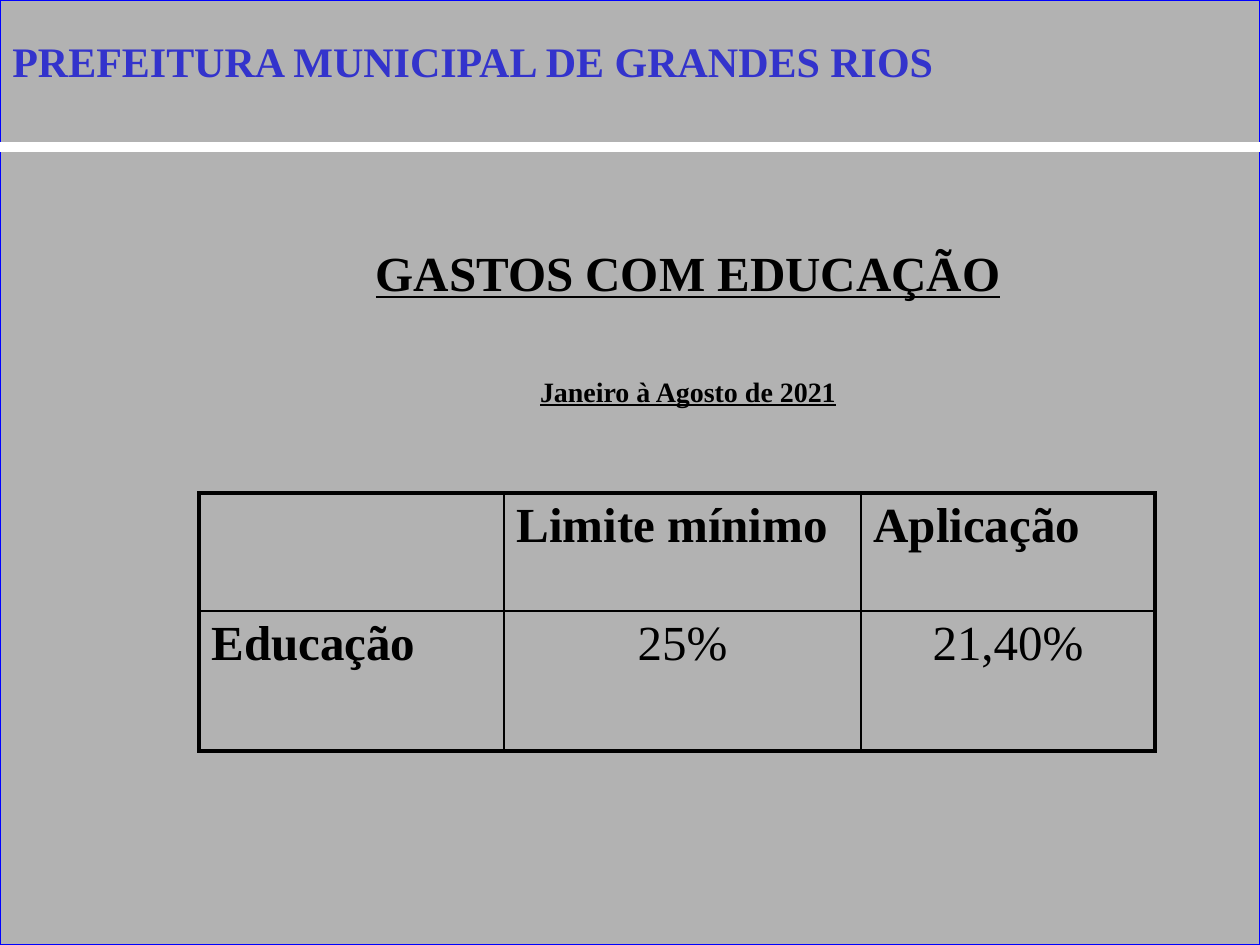
from dataclasses import dataclass

from lxml.etree import SubElement
from pptx import Presentation
from pptx.dml.color import RGBColor
from pptx.enum.shapes import MSO_CONNECTOR, MSO_SHAPE
from pptx.enum.text import PP_ALIGN
from pptx.oxml.ns import qn
from pptx.util import Emu, Pt

PX_PER_INCH = 126


@dataclass(frozen=True)
class Theme:
    font: str = "Times New Roman"
    ground: str = "B2B2B2"
    frame: str = "0000FF"
    rule: str = "FFFFFF"
    ink: str = "000000"
    title: str = "3333CC"
    shadow: str = "808080"
    title_size: int = 24
    large: int = 28
    small: int = 16
    outer_border: float = 2.25
    inner_border: float = 1


THEME = Theme()


def px(n):
    return Emu(round(n * 914400 / PX_PER_INCH))


def rgb(value):
    return RGBColor.from_string(value)


def add_text(p, text, size=THEME.large, color=THEME.ink, bold=True,
             underline=False, align=PP_ALIGN.LEFT, spacing=None, before=0):
    p.alignment = align
    p.line_spacing = spacing
    p.space_before = px(before)
    r = p.add_run()
    r.text = text
    f = r.font
    f.name, f.size, f.bold, f.underline = THEME.font, Pt(size), bold, underline
    f.color.rgb = rgb(color)
    return r


def add_box(s, x, y, w, h, inset_top):
    tf = s.shapes.add_textbox(px(x), px(y), px(w), px(h)).text_frame
    tf.word_wrap = True
    tf.margin_top = px(inset_top)
    return tf


def add_text_shadow(r):
    rPr = r.font._element
    effects = rPr.makeelement(qn("a:effectLst"), {})
    rPr.find(qn("a:solidFill")).addnext(effects)
    shadow = SubElement(effects, qn("a:outerShdw"), dist="35921",
                        dir="2700000", algn="ctr", rotWithShape="0")
    SubElement(shadow, qn("a:srgbClr"), val=THEME.shadow)


def set_borders(cell, widths):
    """Draw the left, right, top and bottom borders, widths in points."""
    tcPr = cell._tc.get_or_add_tcPr()
    for i, (side, width) in enumerate(zip("LRTB", widths)):
        ln = tcPr.makeelement(qn(f"a:ln{side}"), {"w": str(Pt(width))})
        tcPr.insert(i, ln)
        fill = SubElement(ln, qn("a:solidFill"))
        SubElement(fill, qn("a:srgbClr"), val=THEME.ink)


def draw_background(s, x, y, w, h):
    sp = s.shapes.add_shape(MSO_SHAPE.RECTANGLE, px(x), px(y), px(w), px(h))
    sp.shadow.inherit = False
    sp.fill.solid()
    sp.fill.fore_color.rgb = rgb(THEME.ground)
    sp.line.color.rgb = rgb(THEME.frame)
    sp.line.width = Pt(0.75)


def draw_header(s, x, y, w, h):
    """Place the title, with a rule along the bottom of the box."""
    rule = s.shapes.add_connector(MSO_CONNECTOR.STRAIGHT, px(x), px(y + h),
                                  px(x + w), px(y + h))
    rule.line.color.rgb = rgb(THEME.rule)
    rule.line.width = Pt(6)
    SubElement(rule._element.spPr, qn("a:effectLst"))
    tf = add_box(s, x, y + 26, w - 64, 63, inset_top=10)
    r = add_text(tf.paragraphs[0], "PREFEITURA MUNICIPAL DE GRANDES RIOS",
                 size=THEME.title_size, color=THEME.title)
    add_text_shadow(r)


def draw_heading(s, x, y, w, h):
    tf = add_box(s, x, y, w, h, inset_top=14)
    style = dict(underline=True, align=PP_ALIGN.CENTER, spacing=1.5)
    add_text(tf.paragraphs[0], "GASTOS COM EDUCAÇÃO", **style)
    add_text(tf.add_paragraph(), "Janeiro à Agosto de 2021",
             size=THEME.small, before=56, **style)


def draw_spending_table(s, x, y, col_widths, row_heights):
    rows = [["", "Limite mínimo", "Aplicação"],
            ["Educação", "25%", "21,40%"]]
    n_rows, n_cols = len(row_heights), len(col_widths)
    frame = s.shapes.add_table(n_rows, n_cols, px(x), px(y),
                               px(sum(col_widths)), px(sum(row_heights)))
    table = frame.table
    table.first_row = table.horz_banding = False
    for col, width in zip(table.columns, col_widths):
        col.width = px(width)
    for row, height in zip(table.rows, row_heights):
        row.height = px(height)
    for i, row in enumerate(rows):
        for j, text in enumerate(row):
            cell = table.cell(i, j)
            cell.fill.background()
            edges = (j == 0, j == n_cols - 1, i == 0, i == n_rows - 1)
            set_borders(cell, [THEME.outer_border if edge
                               else THEME.inner_border for edge in edges])
            if text:
                is_value = i > 0 and j > 0
                add_text(cell.text_frame.paragraphs[0], text,
                         bold=not is_value,
                         align=PP_ALIGN.CENTER if is_value else PP_ALIGN.LEFT)


def main():
    prs = Presentation()
    prs.slide_width, prs.slide_height = px(1260), px(945)
    s = prs.slides.add_slide(prs.slide_layouts[6])
    draw_background(s, 0, 0, 1260, 945)
    draw_heading(s, 179, 199, 1018, 789)
    draw_spending_table(s, 199, 493, [305, 357, 294], [118, 140])
    draw_header(s, 0, 0, 1260, 147)
    prs.save("out.pptx")


if __name__ == "__main__":
    main()
